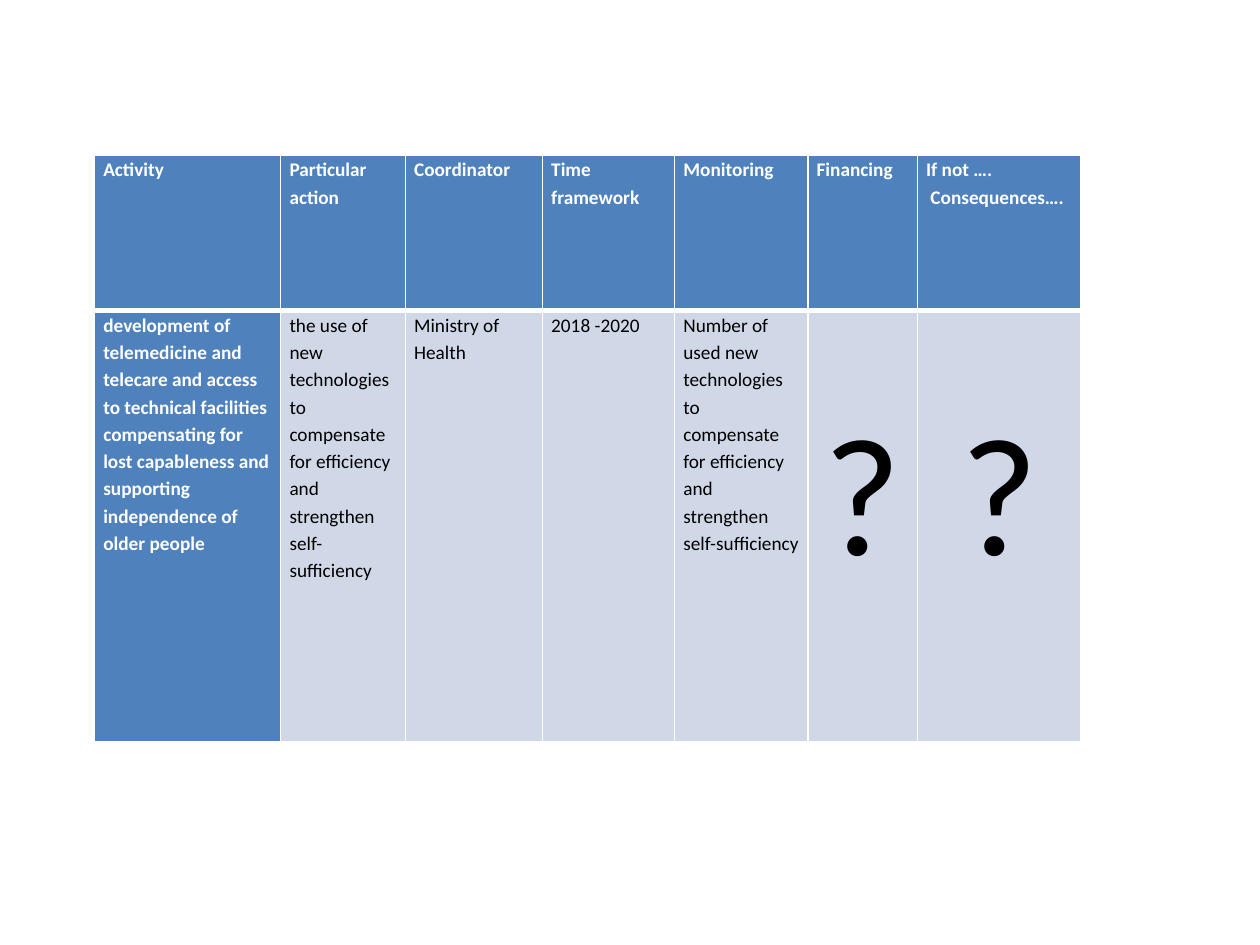
from lxml.etree import SubElement
from pptx import Presentation
from pptx.dml.color import RGBColor
from pptx.enum.text import PP_ALIGN
from pptx.oxml.ns import qn
from pptx.util import Inches, Pt

WHITE, BLACK, BLUE, PALE = "FFFFFF", "000000", "4F81BD", "D0D8E8"
BOX = (0.75, 1.23, 7.83, 4.66)
COLUMNS = [1.48, 0.99, 1.09, 1.05, 1.06, 0.87, 1.3]
ROWS = [1.23, 3.42]
PLAN = [
    ["Activity", "Particular action", "Coordinator", "Time framework",
     "Monitoring", "Financing", "If not ….\n Consequences…."],
    ["development of telemedicine and telecare and access to technical "
     "facilities compensating for lost capableness and supporting "
     "independence of older people",
     "the use of new technologies to compensate for efficiency and "
     "strengthen self-sufficiency",
     "Ministry of Health", "2018 -2020",
     "Number of used new technologies to compensate for efficiency and "
     "strengthen self-sufficiency",
     "?", "?"],
]


def color(value):
    return RGBColor.from_string(value)


def set_borders(cell, widths):
    """Draw white cell edges; the lines must precede the fill in tcPr."""
    props = cell._tc.get_or_add_tcPr()
    for index, (edge, width) in enumerate(widths.items()):
        line = SubElement(props, qn(f"a:{edge}"), w=str(Pt(width)))
        fill = SubElement(line, qn("a:solidFill"))
        SubElement(fill, qn("a:srgbClr"), val=WHITE)
        props.insert(index, line)


def fill_cell(cell, text, heading, header_row):
    open_question = text == "?"
    margins = {"margin_left": 0.07, "margin_right": 0.07, "margin_bottom": 0,
               "margin_top": 0.43 if open_question else 0}
    for name, value in margins.items():
        setattr(cell, name, Inches(value))

    # Text
    tf = cell.text_frame
    tf.text = text
    font = {"name": "Calibri", "size": Pt(96 if open_question else 11),
            "bold": heading}
    for p in tf.paragraphs:
        p.line_spacing = 1.15
        p.alignment = PP_ALIGN.CENTER if open_question else PP_ALIGN.LEFT
        for r in p.runs:
            for name, value in font.items():
                setattr(r.font, name, value)
            r.font.color.rgb = color(WHITE if heading else BLACK)

    # Fill and edges
    cell.fill.solid()
    cell.fill.fore_color.rgb = color(BLUE if heading else PALE)
    set_borders(cell, {"lnL": 1, "lnR": 1, "lnT": 1 if header_row else 3,
                       "lnB": 3 if header_row else 1})


def add_plan_table(s, box):
    left, top, width, height = box
    table = s.shapes.add_table(len(ROWS), len(COLUMNS), Inches(left),
                               Inches(top), Inches(width), Inches(height)).table
    # Columns and rows share the box in proportion
    for column, share in zip(table.columns, COLUMNS):
        column.width = Inches(width * share / sum(COLUMNS))
    for row, share in zip(table.rows, ROWS):
        row.height = Inches(height * share / sum(ROWS))
    # The first row and the first column are headings
    for i, texts in enumerate(PLAN):
        for j, text in enumerate(texts):
            fill_cell(table.cell(i, j), text, i == 0 or j == 0, i == 0)


def main():
    prs = Presentation()
    prs.slide_width, prs.slide_height = Inches(10), Inches(7.5)
    s = prs.slides.add_slide(prs.slide_layouts[6])
    add_plan_table(s, BOX)
    prs.save("out.pptx")


if __name__ == "__main__":
    main()
